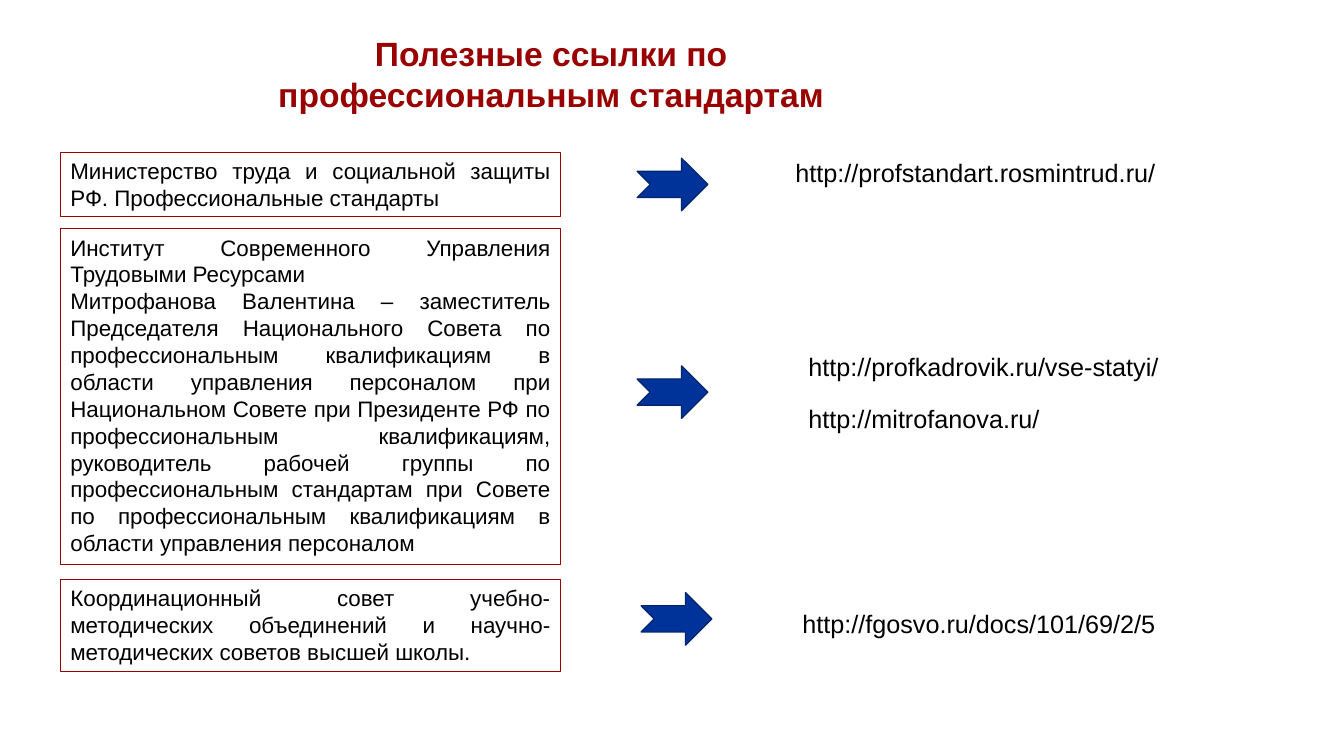
import pptx
import pptx.util
import pptx.dml.color
import pptx.enum.shapes
import pptx.enum.text

Inches = pptx.util.Inches
Pt = pptx.util.Pt
ALIGN = pptx.enum.text.PP_ALIGN
ANCHOR = pptx.enum.text.MSO_ANCHOR
SHAPE = pptx.enum.shapes.MSO_SHAPE

RED, BLUE, NAVY, BLACK = "990000", "003399", "002671", "000000"

# Format values for each kind of text
HEAD = {"size": Pt(24), "bold": True, "name": "Arial"}
BODY = {"size": Pt(16), "name": "Arial"}
LINK = {"size": Pt(18), "name": "Arial"}

# Rows: top, height, paragraphs, arrow (left, top), links (left, top, width, text)
ROWS = [
    (1.51, 0.64,
     ["Министерство труда и социальной защиты РФ. Профессиональные стандарты"],
     (6.32, 1.57),
     [(7.79, 1.51, 3.81, "http://profstandart.rosmintrud.ru/")]),
    (2.27, 3.33,
     ["Институт Современного Управления Трудовыми Ресурсами",
      "Митрофанова Валентина – заместитель Председателя Национального Совета "
      "по профессиональным квалификациям в области управления персоналом при "
      "Национальном Совете при Президенте РФ по профессиональным "
      "квалификациям, руководитель рабочей группы по профессиональным "
      "стандартам при Совете по профессиональным квалификациям в области "
      "управления персоналом"],
     (6.32, 3.63),
     [(7.92, 3.44, 3.73, "http://profkadrovik.ru/vse-statyi/"),
      (7.92, 3.95, 2.53, "http://mitrofanova.ru/")]),
    (5.75, 0.91,
     ["Координационный совет учебно-методических объединений и "
      "научно-методических советов высшей школы."],
     (6.36, 5.88),
     [(7.86, 5.99, 3.74, "http://fgosvo.ru/docs/101/69/2/5")]),
]


def paint(color, code):
    color.rgb = pptx.dml.color.RGBColor.from_string(code)


def write(shape, lines, style, code, align, anchor=ANCHOR.TOP):
    frame = shape.text_frame
    frame.word_wrap = True
    frame.auto_size = pptx.enum.text.MSO_AUTO_SIZE.NONE
    frame.vertical_anchor = anchor
    frame.text = "\n".join(lines)
    for para in frame.paragraphs:
        para.alignment = align
        for key, value in style.items():
            setattr(para.font, key, value)
        paint(para.font.color, code)


def add_title(slide, left, top, width, height):
    title = slide.shapes.title
    place = {"left": left, "top": top, "width": width, "height": height}
    for key, value in place.items():
        setattr(title, key, Inches(value))
    write(title, ["Полезные ссылки по профессиональным стандартам"],
          HEAD, RED, ALIGN.CENTER)


def add_form(slide, kind, box, line, weight, fill=None):
    form = slide.shapes.add_shape(kind, *map(Inches, box))
    form.shadow.inherit = False
    if fill:
        form.fill.solid()
        paint(form.fill.fore_color, fill)
    else:
        form.fill.background()
    paint(form.line.color, line)
    form.line.width = Pt(weight)
    return form


def add_row(slide, left, width, row):
    top, height, lines, arrow, links = row
    # Framed source name
    frame = add_form(slide, SHAPE.RECTANGLE, (left, top, width, height), RED, 0.75)
    write(frame, lines, BODY, BLACK, ALIGN.JUSTIFY)
    # Arrow
    add_form(slide, SHAPE.NOTCHED_RIGHT_ARROW, (*arrow, 0.7, 0.52), NAVY, 1, BLUE)
    # Addresses
    for x, y, wide, text in links:
        label = slide.shapes.add_textbox(*map(Inches, (x, y, wide, 0.4)))
        write(label, [text], LINK, BLACK, ALIGN.LEFT)


def main():
    deck = pptx.Presentation()
    deck.slide_width, deck.slide_height = Inches(13.33), Inches(7.5)
    slide = deck.slides.add_slide(deck.slide_layouts[5])
    add_title(slide, 2.19, 0.28, 6.55, 0.91)
    for row in ROWS:
        add_row(slide, 0.6, 4.96, row)
    deck.save("out.pptx")


if __name__ == "__main__":
    main()
